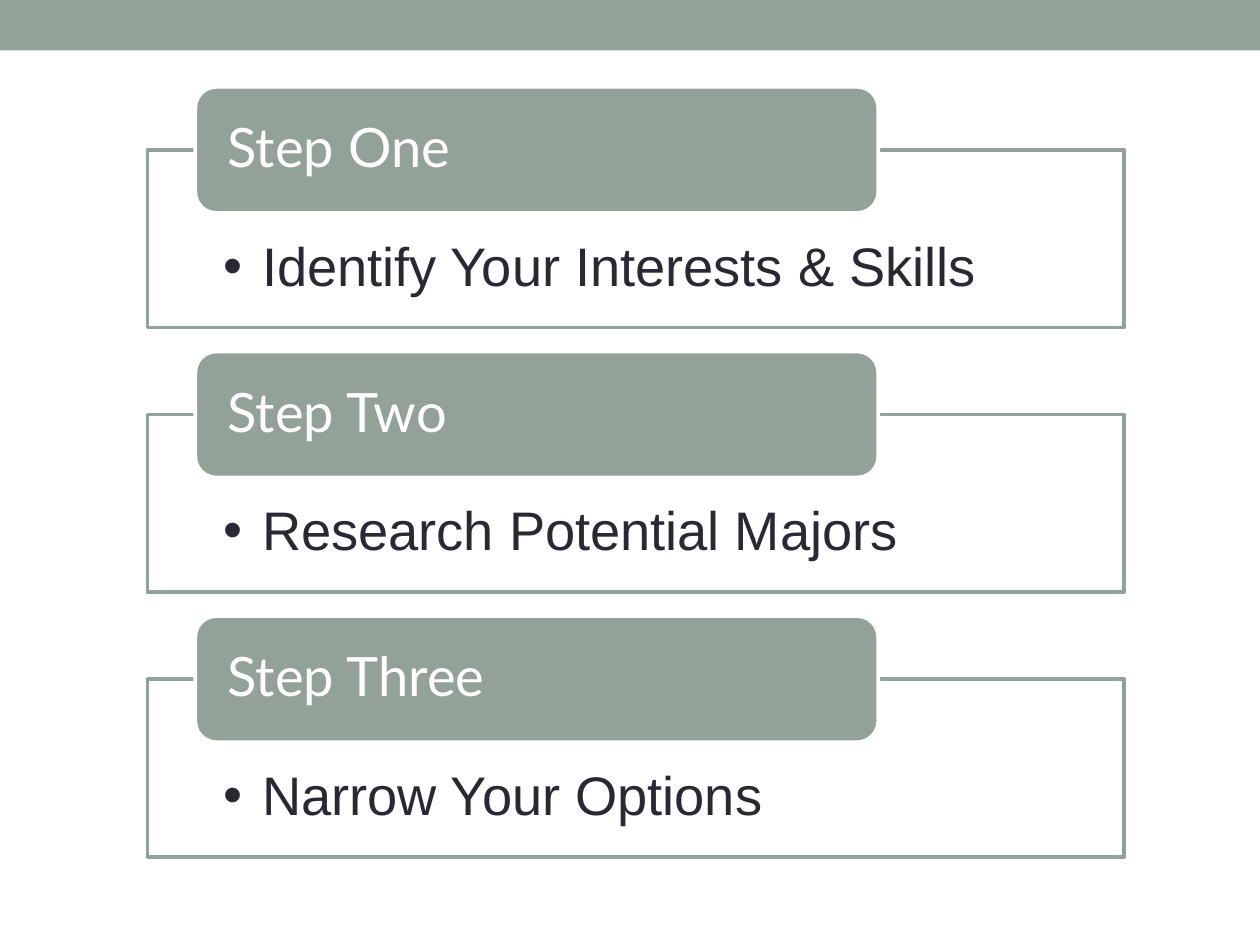
"""Build a slide with three labelled step boxes under a coloured band."""
from lxml import etree
from pptx import Presentation
from pptx import util as u
from pptx.dml.color import RGBColor
from pptx.enum import shapes, text
from pptx.oxml import ns

COLORS = {"sage": "93A299", "white": "FFFFFF", "ink": "292934"}
STEPS = [
    ("Step One", "Identify Your Interests & Skills"),
    ("Step Two", "Research Potential Majors"),
    ("Step Three", "Narrow Your Options"),
]
FIRST_TOP, STEP_PITCH = 0.69, 2.1


def add_block(slide, kind, box, fill, line=None):
    shape = slide.shapes.add_shape(kind, *[u.Inches(value) for value in box])
    shape.shadow.inherit = False
    shape.fill.solid()
    shape.fill.fore_color.rgb = RGBColor.from_string(COLORS[fill])
    if line:
        shape.line.color.rgb = RGBColor.from_string(COLORS[line])
        shape.line.width = u.Pt(2.08)
    else:
        shape.line.fill.background()
    return shape


def write_text(shape, wording, font, color, anchor, insets):
    frame = shape.text_frame
    frame.word_wrap = True
    frame.vertical_anchor = anchor
    frame.margin_left = frame.margin_right = u.Inches(insets[0])
    frame.margin_top, frame.margin_bottom = u.Inches(insets[1]), u.Inches(insets[2])
    paragraph = frame.paragraphs[0]
    paragraph.text = wording
    paragraph.alignment = text.PP_ALIGN.LEFT
    paragraph.line_spacing = 0.9
    paragraph.font.name = font
    paragraph.font.size = u.Pt(31)
    paragraph.font.color.rgb = RGBColor.from_string(COLORS[color])
    return paragraph


presentation = Presentation()
presentation.slide_width = u.Inches(10)
presentation.slide_height = u.Inches(7.5)
slide = presentation.slides.add_slide(presentation.slide_layouts[6])
rectangle = shapes.MSO_SHAPE.RECTANGLE
rounded = shapes.MSO_SHAPE.ROUNDED_RECTANGLE

add_block(slide, rectangle, (0, 0, 10, 0.4), "sage")

for index, (label, task) in enumerate(STEPS):
    top = FIRST_TOP + index * STEP_PITCH

    task_box = add_block(slide, rectangle, (1.17, top + 0.5, 7.75, 1.41), "white", "sage")
    paragraph = write_text(task_box, task, "Arial", "ink", text.MSO_ANCHOR.TOP, (0.6, 0.71, 0.24))
    paragraph.level = 1
    properties = paragraph._p.get_or_add_pPr()
    properties.set("marL", str(u.Inches(0.31)))
    properties.set("indent", str(u.Inches(-0.31)))
    bullet_font = etree.SubElement(properties, ns.qn("a:buFont"))
    bullet_font.set("typeface", "Arial")
    bullet = etree.SubElement(properties, ns.qn("a:buChar"))
    bullet.set("char", "•")
    properties.append(properties.find(ns.qn("a:defRPr")))

    label_box = add_block(slide, rounded, (1.55, top, 5.42, 1), "sage", "white")
    write_text(label_box, label, "Lato", "white", text.MSO_ANCHOR.MIDDLE, (0.21, 0, 0))

presentation.save("out.pptx")
